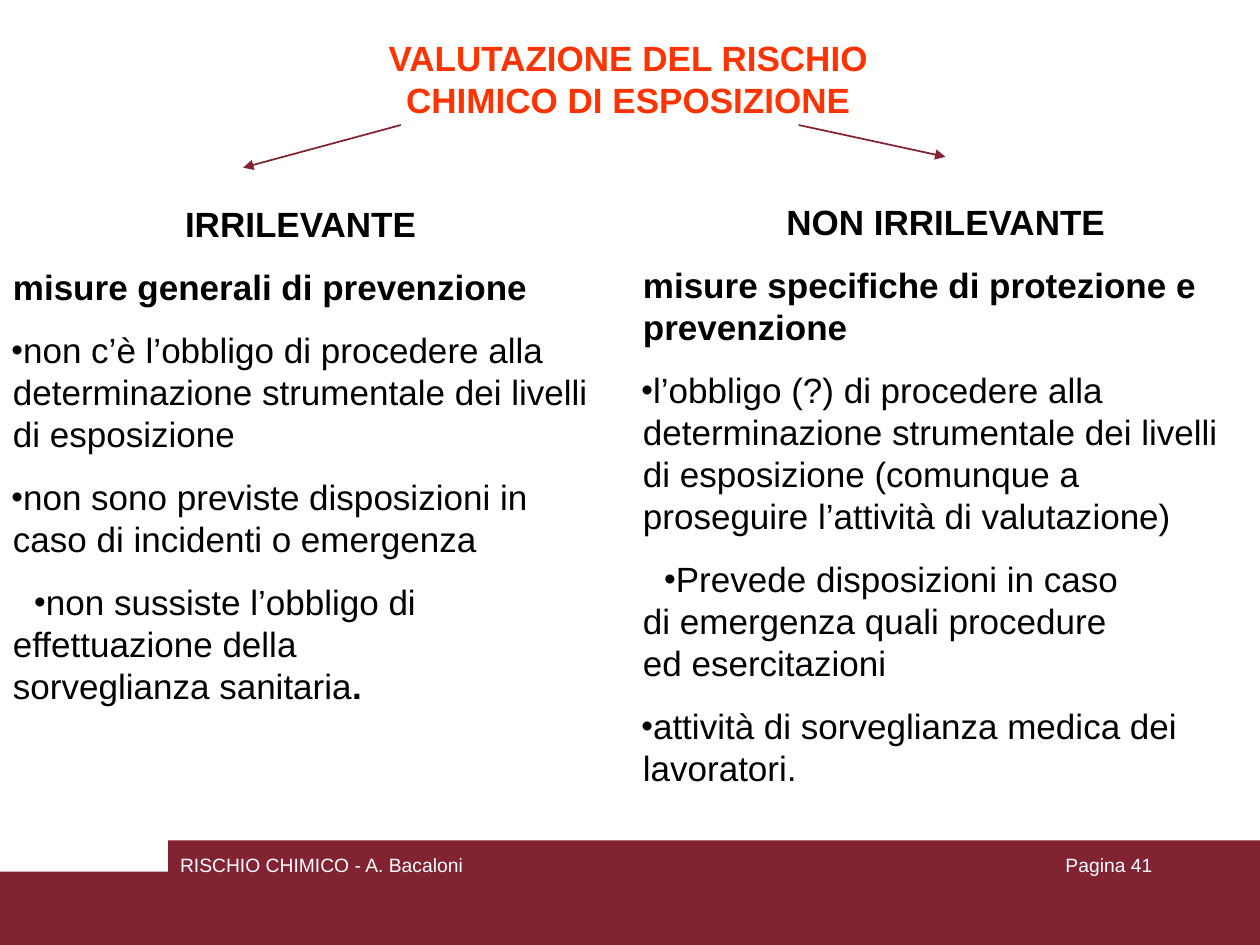
import pptx
import pptx.dml.color
import pptx.enum.shapes
import pptx.enum.text
import pptx.oxml.ns
import pptx.util
from lxml import etree

Cm = pptx.util.Cm
Pt = pptx.util.Pt
ALIGN = pptx.enum.text.PP_ALIGN

MAROON = pptx.dml.color.RGBColor(0x82, 0x23, 0x33)
ORANGE = pptx.dml.color.RGBColor(0xFF, 0x33, 0x00)
BLACK = pptx.dml.color.RGBColor(0x00, 0x00, 0x00)
WHITE = pptx.dml.color.RGBColor(0xFF, 0xFF, 0xFF)

TITLE_LINES = ["VALUTAZIONE DEL RISCHIO", "CHIMICO DI ESPOSIZIONE"]

IRRELEVANT = {
    "heading": "IRRILEVANTE",
    "heading_indent": 3.5,
    "measures": "misure generali di prevenzione",
    "duties": [
        ("non c’è l’obbligo di procedere alla determinazione strumentale "
         "dei livelli di esposizione", False, ""),
        ("non sono previste disposizioni in caso di incidenti o emergenza", False, ""),
        ("non sussiste l’obbligo di effettuazione della sorveglianza sanitaria", True, "."),
    ],
}

RELEVANT = {
    "heading": "NON IRRILEVANTE",
    "heading_indent": 2.92,
    "measures": "misure specifiche di protezione e prevenzione",
    "duties": [
        ("l’obbligo (?) di procedere alla determinazione strumentale dei livelli "
         "di esposizione (comunque a proseguire l’attività di valutazione)", False, ""),
        ("Prevede disposizioni in caso di emergenza quali procedure ed esercitazioni",
         True, ""),
        ("attività di sorveglianza medica dei lavoratori.", False, ""),
    ],
}


def place(shape, left, top, width, height, inset_top=0):
    shape.left, shape.top = Cm(left), Cm(top)
    shape.width, shape.height = Cm(width), Cm(height)
    frame = shape.text_frame
    frame.margin_left = frame.margin_right = frame.margin_bottom = 0
    frame.margin_top = Cm(inset_top)
    frame.word_wrap = True
    frame.auto_size = pptx.enum.text.MSO_AUTO_SIZE.NONE
    frame.vertical_anchor = pptx.enum.text.MSO_ANCHOR.TOP
    return frame


def next_paragraph(frame, first):
    return frame.paragraphs[0] if first else frame.add_paragraph()


def set_font(paragraph, size, color, bold=False):
    font = paragraph.font
    font.name, font.size, font.bold = "Arial", Pt(size), bold
    font.color.rgb = color


def set_indent(paragraph, left, first_line=0, right=0, bullet=False):
    properties = paragraph._p.get_or_add_pPr()
    for side, length in (("marL", left), ("marR", right), ("indent", first_line)):
        properties.set(side, str(int(Cm(length))))
    qn = pptx.oxml.ns.qn
    if bullet:
        etree.SubElement(properties, qn("a:buSzPct")).set("val", "95000")
        etree.SubElement(properties, qn("a:buChar")).set("char", "•")
    else:
        etree.SubElement(properties, qn("a:buNone"))


def add_title(slide, left, top, width, height):
    frame = place(slide.shapes.title, left, top, width, height, 0.03)
    for number, line in enumerate(TITLE_LINES):
        paragraph = next_paragraph(frame, number == 0)
        paragraph.text = line
        paragraph.alignment = ALIGN.CENTER
        paragraph.space_before = Pt(0)
        set_font(paragraph, 20, ORANGE, True)


def fill_column(body, case, left, top, width, height):
    frame = place(body, left, top, width, height, 0.46)
    for first, text, indent in ((True, case["heading"], case["heading_indent"]),
                                (False, case["measures"], 0.03)):
        paragraph = next_paragraph(frame, first)
        paragraph.text = text
        paragraph.space_before = Pt(0 if first else 12)
        set_indent(paragraph, indent)
        set_font(paragraph, 20, BLACK, True)
    for text, inset, bold_end in case["duties"]:
        paragraph = frame.add_paragraph()
        paragraph.text = text
        paragraph.space_before = Pt(12)
        set_indent(paragraph, 0.03, 0.43 if inset else -0.03, 1.9 if inset else 0, True)
        set_font(paragraph, 20, BLACK)
        if bold_end:
            ending = paragraph.add_run()
            ending.text = bold_end
            ending.font.bold = True


def add_arrow(slide, start_x, start_y, end_x, end_y):
    arrow = slide.shapes.add_connector(
        pptx.enum.shapes.MSO_CONNECTOR.STRAIGHT,
        Cm(start_x), Cm(start_y), Cm(end_x), Cm(end_y))
    arrow.line.color.rgb = MAROON
    arrow.line.width = Pt(1)
    qn = pptx.oxml.ns.qn
    etree.SubElement(arrow.line._get_or_add_ln(), qn("a:tailEnd")).set("type", "triangle")
    etree.SubElement(arrow._element.spPr, qn("a:effectLst"))


def add_footer(slide, left, top, width, height):
    notch_x, notch_y = left + 3.39, top + 0.63
    right, bottom = left + width, top + height
    outline = slide.shapes.build_freeform(Cm(right), Cm(top))
    outline.add_line_segments(
        [(Cm(x), Cm(y)) for x, y in ((notch_x, top), (notch_x, notch_y), (left, notch_y),
                                     (left, bottom), (right, bottom))], close=True)
    band = outline.convert_to_shape()
    band.shadow.inherit = False
    band.fill.solid()
    band.fill.fore_color.rgb = MAROON
    band.line.fill.background()
    for text, offset, label_width in (("RISCHIO CHIMICO - A. Bacaloni", 3.63, 6.2),
                                      ("Pagina 41", 21.48, 2.2)):
        label = slide.shapes.add_textbox(0, 0, 0, 0)
        frame = place(label, left + offset, top + 0.26, label_width, 0.5)
        paragraph = frame.paragraphs[0]
        paragraph.text = text
        set_font(paragraph, 11, WHITE)


def main():
    presentation = pptx.Presentation()
    presentation.slide_width, presentation.slide_height = Cm(25.4), Cm(19.05)
    slide = presentation.slides.add_slide(presentation.slide_layouts[3])
    add_footer(slide, 0, 16.94, 25.4, 2.11)
    add_title(slide, 7.8, 0.71, 9.73, 1.78)
    add_arrow(slide, 8.08, 2.52, 4.9, 3.38)
    add_arrow(slide, 16.1, 2.52, 19.06, 3.16)
    fill_column(slide.placeholders[1], IRRELEVANT, 0.23, 3.63, 11.68, 10.67)
    fill_column(slide.placeholders[2], RELEVANT, 12.93, 3.58, 11.68, 12.34)
    presentation.save("out.pptx")


if __name__ == "__main__":
    main()
